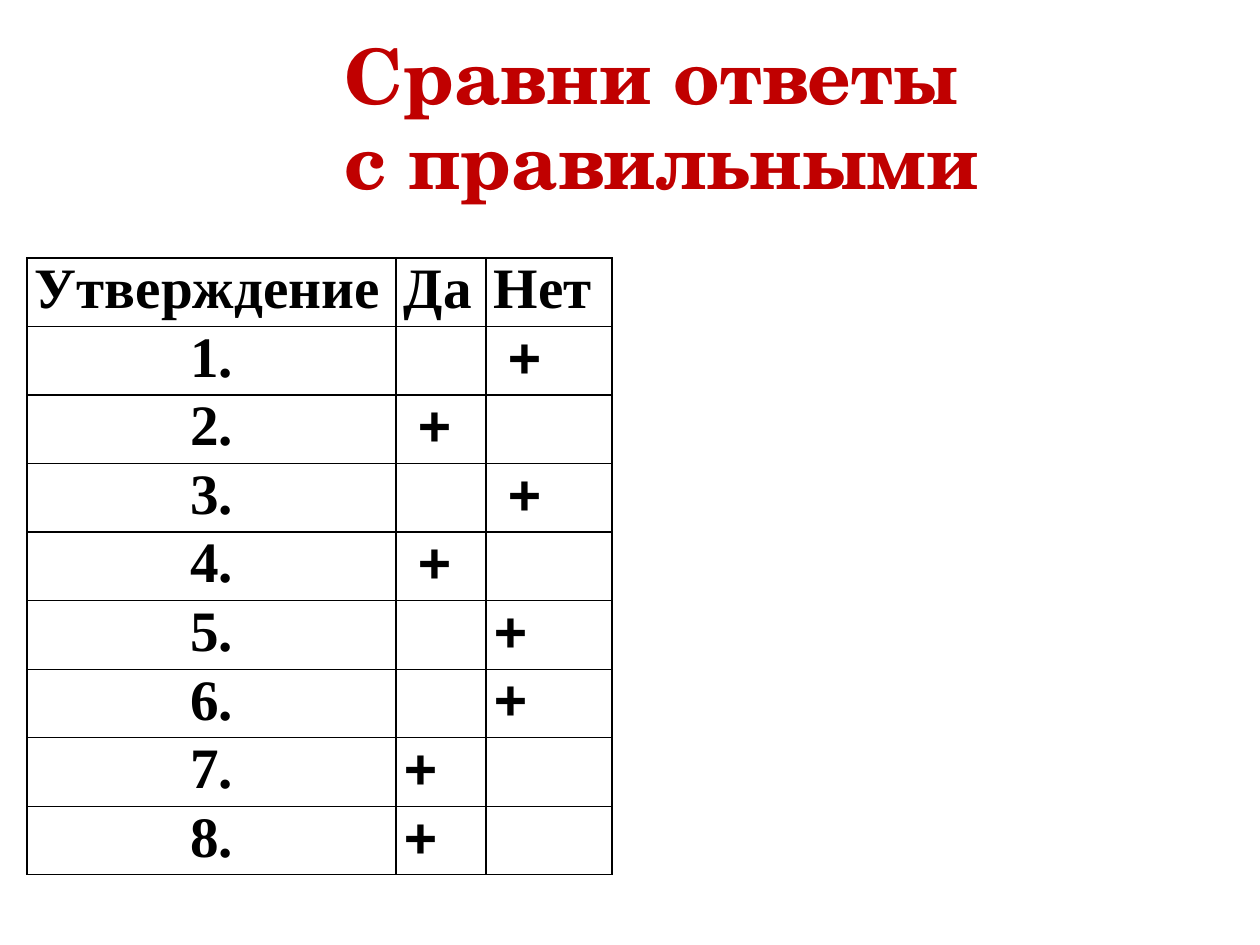
import pptx
import pptx.dml.color
import pptx.enum.text
import pptx.oxml
import pptx.oxml.ns
import pptx.util

PX = 8000
RED = "C00000"
BLACK = "000000"
SERIF = "Times New Roman"
HEADS = ["Утверждение", "Да", "Нет"]
WIDTHS = [369, 90, 126]
MARKS = [2, 1, 2, 1, 2, 2, 1, 1]
ALIGN = pptx.enum.text.PP_ALIGN


def px(num):
    return pptx.util.Emu(num * PX)


def style(para, face, size, tone, align=ALIGN.LEFT):
    para.alignment = align
    font = para.font
    font.name = face
    font.size = pptx.util.Pt(size)
    font.bold = True
    font.color.rgb = pptx.dml.color.RGBColor.from_string(tone)


def add_title(slide, lines):
    title = slide.shapes.title
    title.left, title.top, title.width, title.height = map(px, (333, 31, 674, 183))
    frame = title.text_frame
    frame.text = "\n".join(lines)
    frame.word_wrap = False
    frame.auto_size = pptx.enum.text.MSO_AUTO_SIZE.NONE
    frame.vertical_anchor = pptx.enum.text.MSO_ANCHOR.TOP
    for para in frame.paragraphs:
        para.line_spacing = 0.93
        para.space_before = pptx.util.Pt(0)
        style(para, "TeX Gyre Schola", 48, RED)


def frame_cell(cell):
    props = cell._tc.get_or_add_tcPr()
    space = pptx.oxml.ns.nsdecls("a")
    for side in "LRTB":
        props.append(pptx.oxml.parse_xml(
            f'<a:ln{side} {space} w="12700"><a:solidFill>'
            f'<a:srgbClr val="{BLACK}"/></a:solidFill></a:ln{side}>'))
    cell.fill.background()


def fill_cell(cell, text, face=SERIF, align=ALIGN.LEFT, inset=8):
    cell.text = text
    cell.margin_left = px(inset)
    cell.margin_right = px(8)
    cell.margin_top = cell.margin_bottom = 0
    style(cell.text_frame.paragraphs[0], face, 36, BLACK, align)


def add_answers(slide):
    shape = slide.shapes.add_table(len(MARKS) + 1, len(HEADS),
                                   px(27), px(258), px(sum(WIDTHS)), px(617))
    table = shape.table
    table.first_row = table.horz_banding = False
    for col, width in zip(table.columns, WIDTHS):
        col.width = px(width)
    for cell in table.iter_cells():
        frame_cell(cell)
    for col, head in enumerate(HEADS):
        fill_cell(table.cell(0, col), head)
    for row, mark in enumerate(MARKS, 1):
        fill_cell(table.cell(row, 0), f"{row}.", align=ALIGN.CENTER)
        inset = 22 if row <= 4 else 8
        fill_cell(table.cell(row, mark), "+", "Arial", inset=inset)


def main():
    deck = pptx.Presentation()
    deck.slide_width, deck.slide_height = px(1260), px(945)
    slide = deck.slides.add_slide(deck.slide_layouts[5])
    add_title(slide, ["Сравни ответы", "с правильными"])
    add_answers(slide)
    deck.save("out.pptx")


if __name__ == "__main__":
    main()
